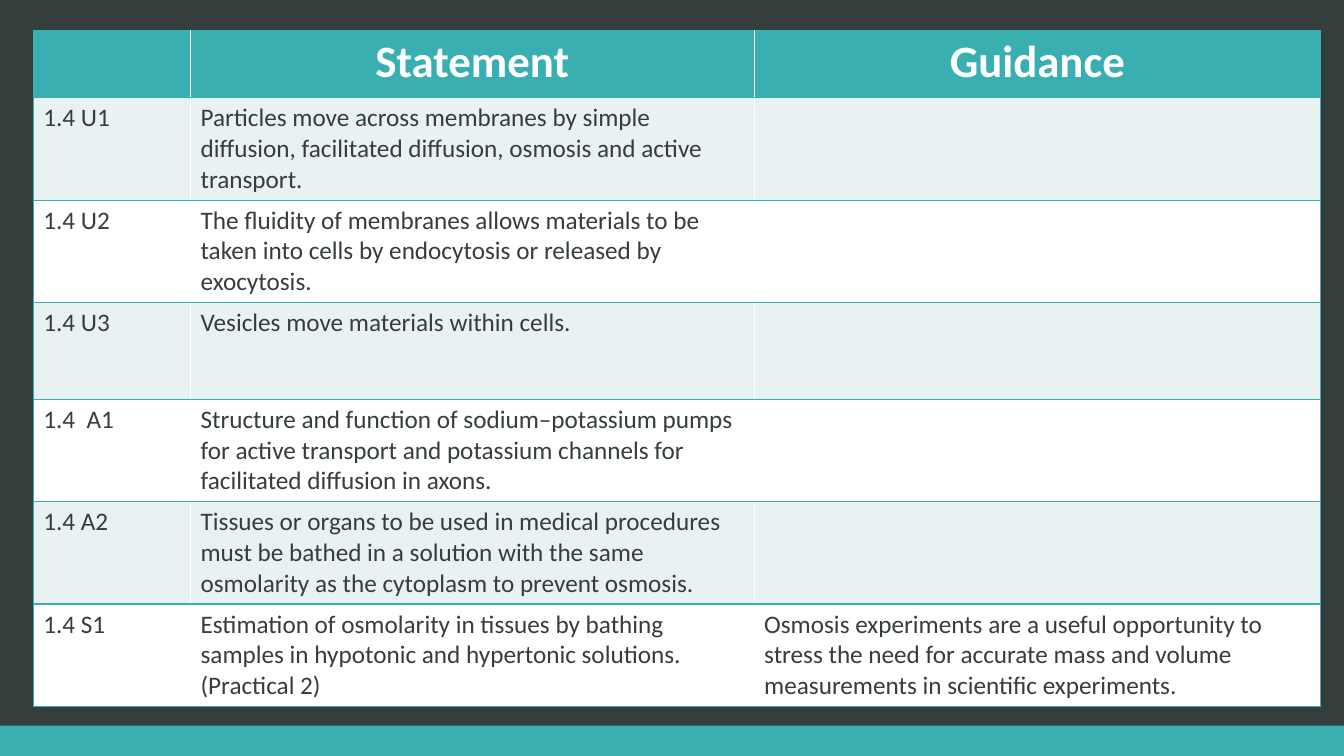
from dataclasses import dataclass

from lxml.etree import SubElement
from pptx import Presentation
from pptx.dml.color import RGBColor
from pptx.enum.shapes import MSO_SHAPE
from pptx.enum.text import PP_ALIGN
from pptx.oxml.ns import qn
from pptx.util import Inches, Pt


@dataclass(frozen=True)
class Theme:
    background: str = "363D3D"
    accent: str = "3AAFB2"
    band: str = "E8F2F2"
    white: str = "FFFFFF"
    text: str = "363D3D"
    font: str = "Calibri"
    header_size: int = 32
    body_size: int = 18
    border_width: int = 1


HEADER = ("", "Statement", "Guidance")
STATEMENTS = [
    ("1.4 U1", "Particles move across membranes by simple diffusion, "
               "facilitated diffusion, osmosis and active transport.", ""),
    ("1.4 U2", "The fluidity of membranes allows materials to be taken into cells "
               "by endocytosis or released by exocytosis.", ""),
    ("1.4 U3", "Vesicles move materials within cells.", ""),
    ("1.4  A1", "Structure and function of sodium–potassium pumps for active transport "
                "and potassium channels for facilitated diffusion in axons.", ""),
    ("1.4 A2", "Tissues or organs to be used in medical procedures must be bathed in a "
               "solution with the same osmolarity as the cytoplasm to prevent osmosis.", ""),
    ("1.4 S1", "Estimation of osmolarity in tissues by bathing samples in hypotonic and "
               "hypertonic solutions. (Practical 2)",
     "Osmosis experiments are a useful opportunity to stress the need for accurate "
     "mass and volume measurements in scientific experiments."),
]
COLUMN_WIDTHS = (1.56, 5.59, 5.62)
HEADER_HEIGHT, ROW_HEIGHT = 0.67, 0.96


class SlideBuilder:
    def __init__(self, slide, theme):
        self.slide = slide
        self.theme = theme

    def background(self):
        self.paint(self.slide.background.fill, self.theme.background)

    def paint(self, fill, color):
        fill.solid()
        fill.fore_color.rgb = RGBColor.from_string(color)

    def bar(self, left, top, width, height):
        shape = self.slide.shapes.add_shape(
            MSO_SHAPE.RECTANGLE, *map(Inches, (left, top, width, height)))
        shape.shadow.inherit = False
        self.paint(shape.fill, self.theme.accent)
        shape.line.fill.background()

    def borders(self, cell, sides):
        """Draw the sides named by letters, which must be in the order LRTB."""
        properties = cell._tc.get_or_add_tcPr()
        for side in sides:
            line = SubElement(properties, qn(f"a:ln{side}"),
                              w=str(Pt(self.theme.border_width)))
            fill = SubElement(line, qn("a:solidFill"))
            SubElement(fill, qn("a:srgbClr"), val=self.theme.accent)

    def cell_text(self, cell, text, is_header):
        theme = self.theme
        paragraph = cell.text_frame.paragraphs[0]
        paragraph.alignment = PP_ALIGN.CENTER if is_header else PP_ALIGN.LEFT
        run = paragraph.add_run()
        run.text = text
        style = {
            "name": theme.font,
            "size": Pt(theme.header_size if is_header else theme.body_size),
            "bold": is_header,
        }
        for name, value in style.items():
            setattr(run.font, name, value)
        run.font.color.rgb = RGBColor.from_string(theme.white if is_header else theme.text)

    def table(self, left, top, rows, widths, heights):
        theme = self.theme
        frame = self.slide.shapes.add_table(
            len(rows), len(widths),
            *map(Inches, (left, top, sum(widths), sum(heights))))
        table = frame.table
        for column, width in zip(table.columns, widths):
            column.width = Inches(width)
        for row, height in zip(table.rows, heights):
            row.height = Inches(height)
        edges = {0: "LTB", len(widths) - 1: "RTB"}
        for row_index, row in enumerate(rows):
            is_header = row_index == 0
            band = theme.band if row_index % 2 else theme.white
            for column_index, text in enumerate(row):
                cell = table.cell(row_index, column_index)
                self.borders(cell, edges.get(column_index, "TB"))
                self.paint(cell.fill, theme.accent if is_header else band)
                if text:
                    self.cell_text(cell, text, is_header)


def main():
    presentation = Presentation()
    presentation.slide_width = Inches(13.33)
    presentation.slide_height = Inches(7.5)
    blank_layout = presentation.slide_layouts[6]
    builder = SlideBuilder(presentation.slides.add_slide(blank_layout), Theme())
    builder.background()
    builder.bar(0, 7.2, 13.33, 0.3)
    heights = [HEADER_HEIGHT] + [ROW_HEIGHT] * len(STATEMENTS)
    builder.table(0.33, 0.3, [HEADER, *STATEMENTS], COLUMN_WIDTHS, heights)
    presentation.save("out.pptx")


if __name__ == "__main__":
    main()
